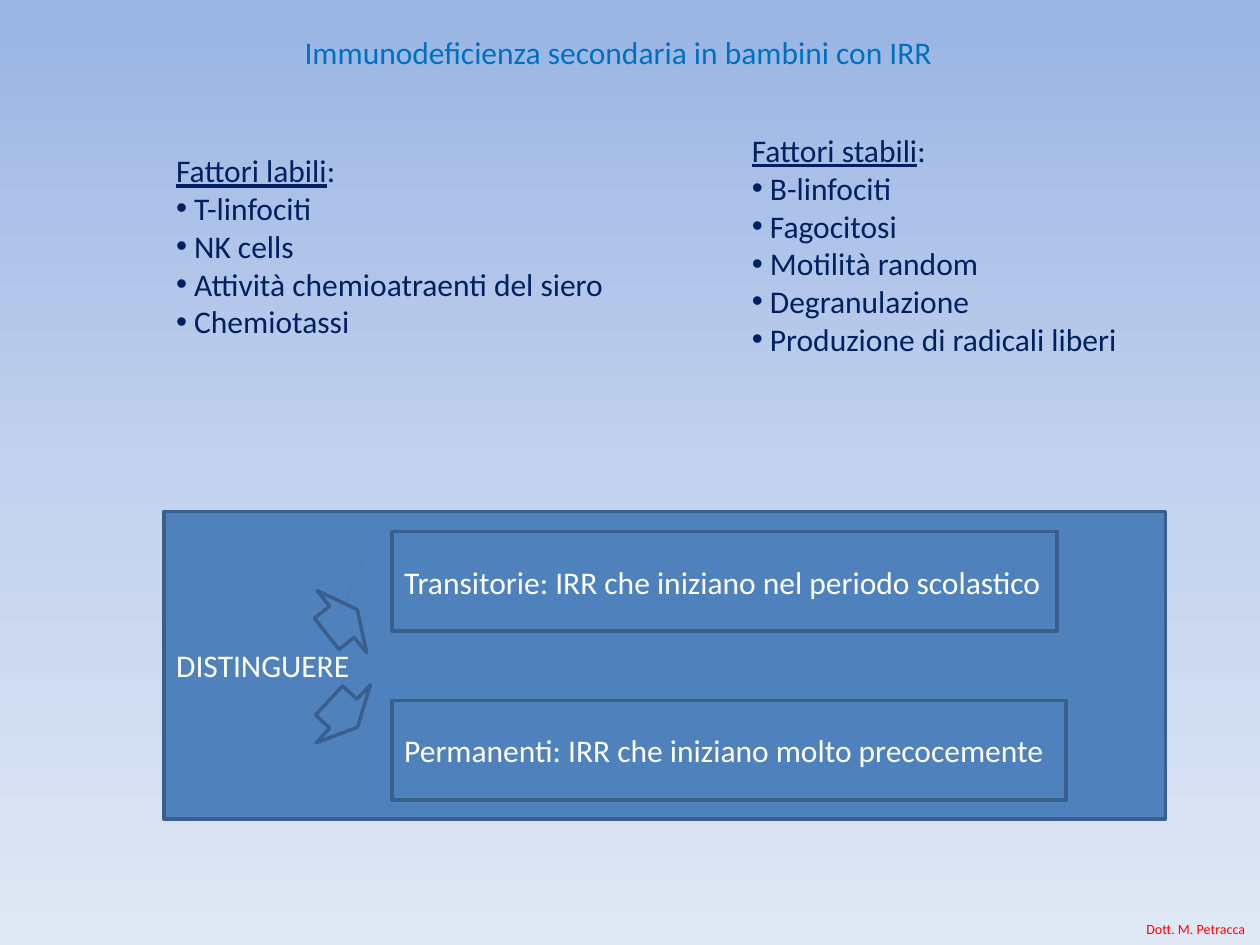
from copy import deepcopy
from pptx import Presentation
from pptx.dml.color import RGBColor
from pptx.enum.shapes import MSO_CONNECTOR, MSO_SHAPE
from pptx.enum.text import MSO_ANCHOR, MSO_AUTO_SIZE, PP_ALIGN
from pptx.oxml.ns import qn
from pptx.util import Pt
from lxml.etree import SubElement

NAVY, BLUE, EDGE, WHITE = "002060", "4F81BD", "3A5F8C", "FFFFFF"


def color(code):
    return RGBColor.from_string(code)


def write(para, text, hue, size=18, **style):
    run = para.add_run()
    run.text = text
    run.font.color.rgb = color(hue)
    for key, value in dict(name="Calibri", size=Pt(size), **style).items():
        setattr(run.font, key, value)


def text_box(slide, box):
    frame = slide.shapes.add_textbox(*map(Pt, box)).text_frame
    frame.word_wrap = False
    frame.auto_size = MSO_AUTO_SIZE.SHAPE_TO_FIT_TEXT
    return frame


def label(slide, box, text, hue, size=18):
    write(text_box(slide, box).paragraphs[0], text, hue, size)


def factors(slide, box, head, items):
    frame = text_box(slide, box)
    first = frame.paragraphs[0]
    write(first, head, NAVY, underline=True)
    write(first, ":", NAVY, underline=False)
    for item in items:
        para = frame.add_paragraph()
        props = para._p.get_or_add_pPr()
        SubElement(props, qn("a:buFont")).set("typeface", "Arial")
        SubElement(props, qn("a:buChar")).set("char", "•")
        write(para, " " + item, NAVY)


def block(slide, kind, box, text="", turn=0):
    shape = slide.shapes.add_shape(kind, *map(Pt, box))
    shape.shadow.inherit = False
    shape.rotation = turn
    shape.fill.solid()
    shape.fill.fore_color.rgb = color(BLUE)
    shape.line.color.rgb = color(EDGE)
    shape.line.width = Pt(2)
    if text:
        frame = shape.text_frame
        frame.word_wrap = True
        frame.vertical_anchor = MSO_ANCHOR.MIDDLE
        frame.paragraphs[0].alignment = PP_ALIGN.LEFT
        write(frame.paragraphs[0], text, WHITE)


def panel(slide, box):
    left, top = box[:2]
    block(slide, MSO_SHAPE.RECTANGLE, box, "DISTINGUERE")

    # Thin line behind the block arrows
    line = slide.shapes.add_connector(
        MSO_CONNECTOR.STRAIGHT, Pt(left + 90.7), Pt(top + 85.7),
        Pt(left + 113), Pt(top + 28.8))
    line.line.color.rgb = color("4B7EBC")
    line.line.width = Pt(0.75)
    SubElement(line.line._get_or_add_ln(), qn("a:tailEnd")).set("type", "arrow")
    SubElement(line._element.spPr, qn("a:effectLst"))

    # Block arrows towards the two cases
    for x, y, turn in ((90.7, 40.3, 321.6), (91.4, 92.9, 43.1)):
        block(slide, MSO_SHAPE.RIGHT_ARROW, (left + x, top + y, 22.3, 45.4),
              turn=turn)

    # Cases
    cases = (
        (11.5, 380.2, "Transitorie: IRR che iniziano nel periodo scolastico"),
        (108, 385.2, "Permanenti: IRR che iniziano molto precocemente"),
    )
    for y, width, text in cases:
        block(slide, MSO_SHAPE.RECTANGLE,
              (left + 130.3, top + y, width, 56.9), text)


def backdrop(slide):
    fill = slide.background.fill
    fill.gradient()
    fill.gradient_angle = 270
    stops = fill.gradient_stops
    last = stops[1]._gs
    last.addprevious(deepcopy(last))
    tones = ((0, "9AB5E4"), (0.5, "C2D1ED"), (1, "E1E8F5"))
    for stop, (place, hue) in zip(fill.gradient_stops, tones):
        stop.position = place
        stop.color.rgb = color(hue)


def main():
    deck = Presentation()
    deck.slide_width, deck.slide_height = Pt(720), Pt(540)
    slide = deck.slides.add_slide(deck.slide_layouts[6])
    backdrop(slide)

    # Author and title
    label(slide, (648, 522.7, 72, 17), "Dott. M. Petracca", "FF0000", 8)
    label(slide, (167, 15.1, 377.3, 29),
          "Immunodeficienza secondaria in bambini con IRR", "0070C0")

    # Factor lists
    factors(slide, (93.6, 82.8, 266.4, 116.6), "Fattori labili",
            ("T-linfociti", "NK cells", "Attività chemioatraenti del siero",
             "Chemiotassi"))
    factors(slide, (422.6, 71.3, 225.4, 138.2), "Fattori stabili",
            ("B-linfociti", "Fagocitosi", "Motilità random", "Degranulazione",
             "Produzione di radicali liberi"))

    panel(slide, (93.6, 292.3, 572.4, 175.7))
    deck.save("out.pptx")


if __name__ == "__main__":
    main()
